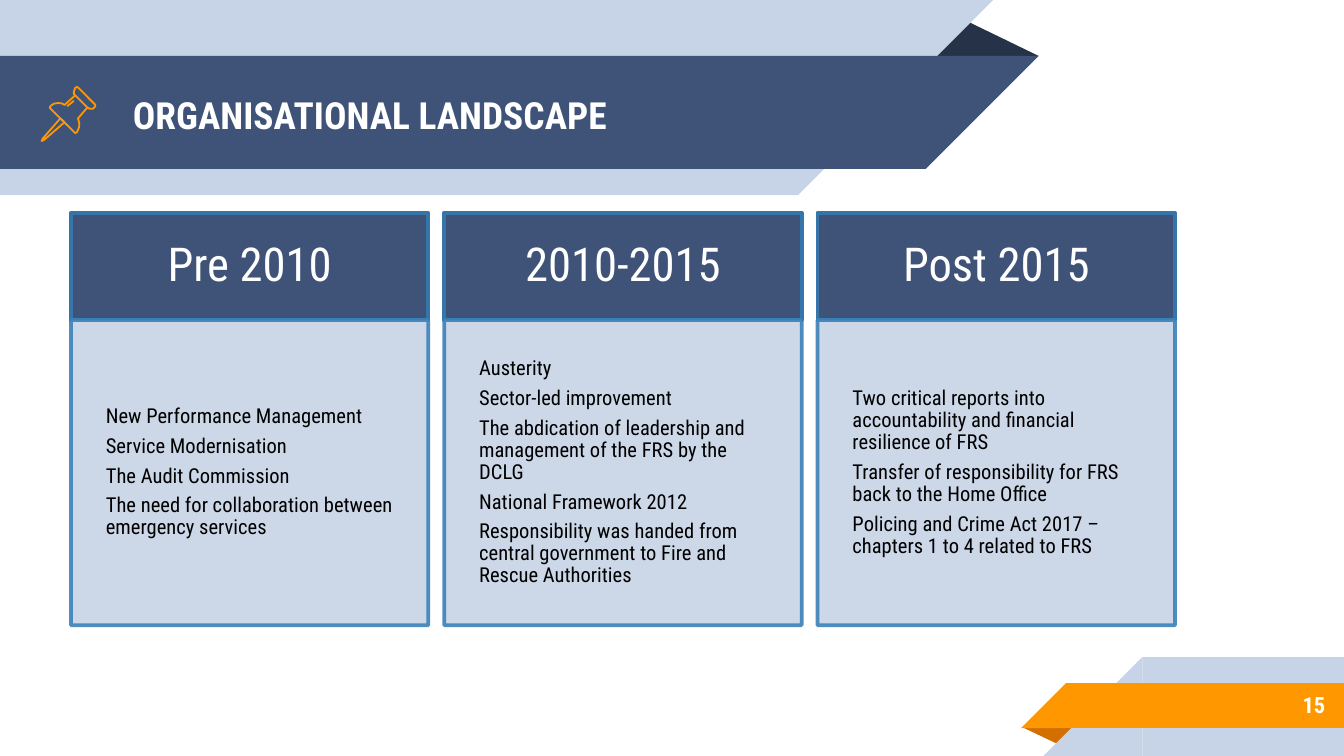
from dataclasses import dataclass

from lxml import etree
from pptx import Presentation
from pptx.dml.color import RGBColor
from pptx.enum import shapes, text
from pptx.oxml import ns
from pptx.util import Pt


@dataclass(frozen=True)
class Theme:
    font: str = "Roboto Condensed"
    navy: str = "3F5378"
    dark_fold: str = "263248"
    pale: str = "C7D3E6"
    orange: str = "FF9800"
    orange_fold: str = "D26F00"
    header_line: str = "3575A9"
    body_line: str = "3A81BA"
    white: str = "FFFFFF"
    black: str = "000000"
    title_size: float = 20
    number_size: float = 12
    header_size: float = 25
    body_size: float = 11


THEME = Theme()
SHAPE = shapes.MSO_SHAPE
ALIGN = text.PP_ALIGN

PERIODS = [
    ("Pre 2010", [
        "New Performance Management",
        "Service Modernisation",
        "The Audit Commission",
        "The need for collaboration between emergency services",
    ]),
    ("2010-2015", [
        "Austerity",
        "Sector-led improvement",
        "The abdication of leadership and management of the FRS by the DCLG",
        "National Framework 2012",
        "Responsibility was handed from central government to Fire and Rescue Authorities",
    ]),
    ("Post 2015", [
        "Two critical reports into accountability and financial resilience of FRS",
        "Transfer of responsibility for FRS back to the Home Office",
        "Policing and Crime Act 2017 – chapters 1 to 4 related to FRS",
    ]),
]

PIN_NEEDLE = [(32.4, 63.4), (23, 74.2), (22.3, 75.6), (23.8, 74.9), (34.6, 65.5)]
PIN_CAP = [(40.3, 51.1), (46.8, 57.6), (48.2, 58.3), (49.7, 58.3), (51.1, 56.9),
           (51.1, 56.2), (41.8, 46.8), (41, 46.6), (40.3, 47.2), (39.6, 49), (39.6, 50.4)]
PIN_BODY = [(40.3, 51.1), (34.6, 56.2), (33.1, 55.4), (31, 55.2), (28.8, 55.6),
            (27.2, 56.7), (26.6, 57.6), (27.2, 58.3), (39.6, 70.6), (40.4, 71.3),
            (41.2, 70.8), (41.8, 69.6), (42.5, 67.7), (42.4, 65.5), (41.8, 63.4), (46.8, 57.6)]


def color(value):
    return RGBColor.from_string(value)


def add_block(slide, kind, left, top, width, height, fill, flip=None):
    shape = slide.shapes.add_shape(kind, Pt(left), Pt(top), Pt(width), Pt(height))
    shape.shadow.inherit = False
    shape.fill.solid()
    shape.fill.fore_color.rgb = color(fill)
    shape.line.fill.background()
    if flip:
        shape._element.spPr.find(ns.qn("a:xfrm")).set(flip, "1")
    return shape


def add_fold(slide, left, top, width, height, fill, rotation=0):
    shape = add_block(slide, SHAPE.ISOSCELES_TRIANGLE, left, top, width, height, fill)
    shape.adjustments[0] = 0.324
    shape.rotation = rotation


def add_top_ribbon(slide, top, width, height, fill):
    add_block(slide, SHAPE.RECTANGLE, 0, top, width, height, fill)
    add_block(slide, SHAPE.RIGHT_TRIANGLE, width, top, height, height, fill, "flipV")


def add_bottom_ribbon(slide, left, top, height, fill):
    add_block(slide, SHAPE.RIGHT_TRIANGLE, left - height, top, height, height, fill, "flipH")
    add_block(slide, SHAPE.RECTANGLE, left, top, 720 - left, height, fill)


def write(shape, lines, size, ink, align=ALIGN.LEFT, bold=False, inset=7.2, spacing=None, after=0):
    frame = shape.text_frame
    frame.word_wrap = True
    frame.auto_size = text.MSO_AUTO_SIZE.NONE
    frame.vertical_anchor = text.MSO_ANCHOR.MIDDLE
    frame.margin_left = frame.margin_right = Pt(inset)
    frame.margin_top = frame.margin_bottom = Pt(inset)
    frame.text = "\n".join(lines)
    for paragraph in frame.paragraphs:
        paragraph.alignment = align
        paragraph.line_spacing = spacing
        paragraph.space_after = Pt(after)
        for run in paragraph.runs:
            run.font.name = THEME.font
            run.font.size = Pt(size)
            run.font.bold = bold
            run.font.color.rgb = color(ink)


def set_line(shape, ink, width):
    shape.line.color.rgb = color(ink)
    shape.line.width = Pt(width)


def make_translucent(shape, percent):
    for element in shape._element.spPr.iter(ns.qn("a:srgbClr")):
        etree.SubElement(element, ns.qn("a:alpha")).set("val", str(percent * 1000))


def add_period(slide, left, heading, points):
    width, top, header_height, body_height = 191.5, 114, 57.5, 163.5
    header = add_block(slide, SHAPE.RECTANGLE, left, top, width, header_height, THEME.navy)
    set_line(header, THEME.header_line, 2)
    write(header, [heading], THEME.header_size, THEME.white, ALIGN.CENTER, inset=15, spacing=0.9)
    body = add_block(slide, SHAPE.RECTANGLE, left, top + header_height, width, body_height, THEME.pale)
    set_line(body, THEME.body_line, 2)
    make_translucent(body, 90)
    write(body, points, THEME.body_size, THEME.black, inset=18.7, spacing=0.9, after=4)


def add_outline(slide, points, close):
    corners = [(Pt(x), Pt(y)) for x, y in points]
    builder = slide.shapes.build_freeform(*corners[0])
    builder.add_line_segments(corners[1:], close=close)
    shape = builder.convert_to_shape()
    shape.shadow.inherit = False
    shape.fill.background()
    set_line(shape, THEME.orange, 0.96)


def add_pin(slide):
    add_outline(slide, PIN_NEEDLE, True)
    add_outline(slide, PIN_CAP, True)
    add_outline(slide, PIN_BODY, False)
    glint = slide.shapes.add_connector(
        shapes.MSO_CONNECTOR.STRAIGHT, Pt(36), Pt(56.9), Pt(39.6), Pt(54))
    set_line(glint, THEME.orange, 0.96)
    etree.SubElement(glint._element.spPr, ns.qn("a:effectLst"))


def add_title(slide, title):
    shape = slide.shapes.title
    shape.left, shape.top, shape.width, shape.height = Pt(64), Pt(31), Pt(433), Pt(60.5)
    write(shape, [title], THEME.title_size, THEME.white, bold=True)
    slide.shapes._spTree.append(shape._element)


def add_number(slide, number):
    box = slide.shapes.add_textbox(Pt(600), Pt(365), Pt(117), Pt(25))
    write(box, [number], THEME.number_size, THEME.white, ALIGN.RIGHT, bold=True)


def main():
    presentation = Presentation()
    presentation.slide_width, presentation.slide_height = Pt(720), Pt(405)
    slide = presentation.slides.add_slide(presentation.slide_layouts[5])

    add_fold(slide, 495.5, 10, 61, 20, THEME.dark_fold)
    add_top_ribbon(slide, 0, 427.5, 104.5, THEME.pale)
    add_top_ribbon(slide, 30, 496, 60.5, THEME.navy)
    add_fold(slide, 547.5, 389.5, 31, 10, THEME.orange_fold, 180)
    add_bottom_ribbon(slide, 612, 352, 53, THEME.pale)
    add_bottom_ribbon(slide, 571, 366, 24, THEME.orange)

    add_title(slide, "ORGANISATIONAL LANDSCAPE")
    add_number(slide, "15")
    add_pin(slide)
    for column, (heading, points) in enumerate(PERIODS):
        add_period(slide, 38 + 200 * column, heading, points)

    presentation.save("out.pptx")


if __name__ == "__main__":
    main()
